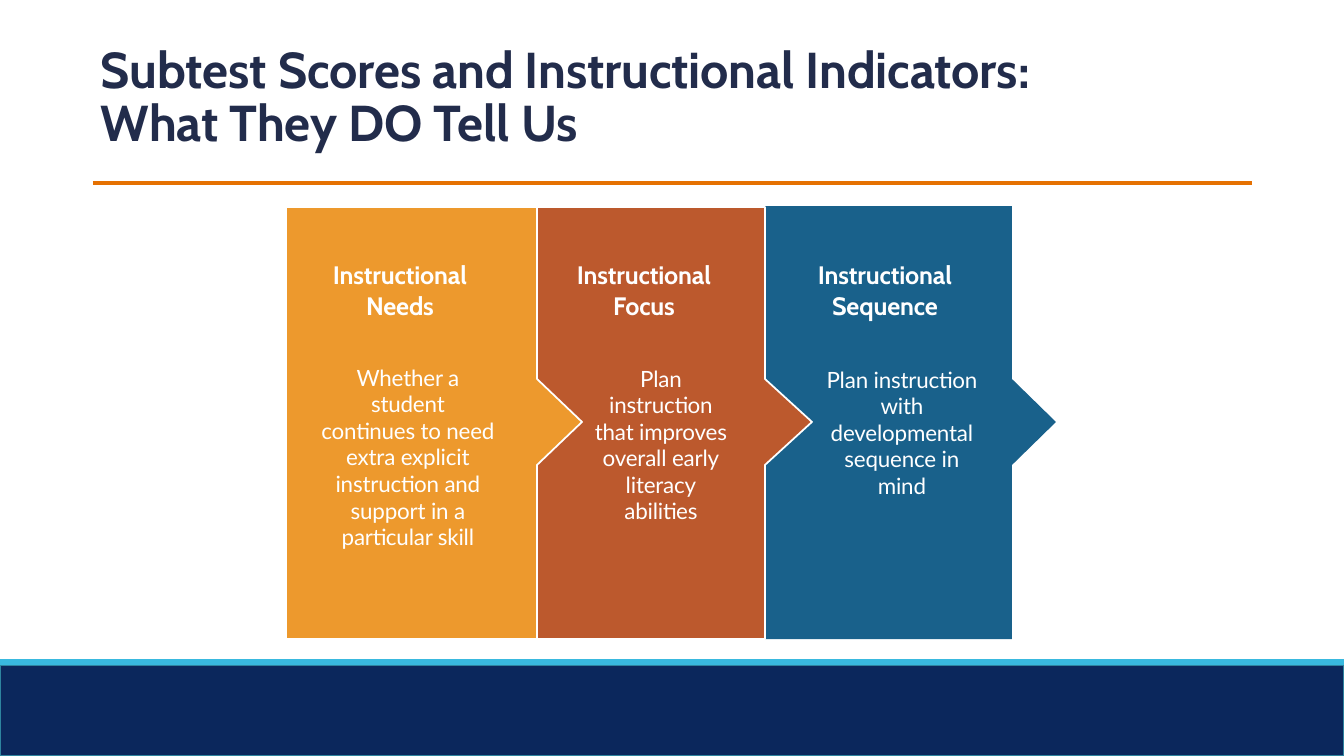
from dataclasses import dataclass

from lxml import etree
from pptx import Presentation
from pptx.dml.color import RGBColor
from pptx.enum.shapes import MSO_CONNECTOR, MSO_SHAPE
from pptx.enum.text import PP_ALIGN
from pptx.oxml.ns import qn
from pptx.util import Emu, Pt

STRAIGHT = MSO_CONNECTOR.STRAIGHT
RECTANGLE = MSO_SHAPE.RECTANGLE
LEFT, CENTER = PP_ALIGN.LEFT, PP_ALIGN.CENTER
SCALE = 914400 / 100.8


@dataclass(frozen=True)
class Theme:
    navy: str = "0B275C"
    teal: str = "2E849F"
    cyan: str = "39B9DF"
    rule: str = "E57102"
    ink: str = "222C4B"
    white: str = "FFFFFF"
    blue: str = "19618B"
    rust: str = "BC592D"
    orange: str = "ED992D"
    head_font: str = "Cabin"
    body_font: str = "Lato"
    title_size: int = 36
    head_size: int = 18
    body_size: int = 16


def px(n):
    return Emu(round(n * SCALE))


def rgb(color):
    return RGBColor.from_string(color)


class Deck:
    def __init__(self, theme):
        self.theme = theme
        self.prs = Presentation()
        self.prs.slide_width, self.prs.slide_height = px(1344), px(756)
        self.s = self.prs.slides.add_slide(self.prs.slide_layouts[6])

    def paint(self, sp, fill, line, width):
        sp.shadow.inherit = False
        sp.fill.solid()
        sp.fill.fore_color.rgb = rgb(fill)
        if line:
            sp.line.color.rgb = rgb(line)
            sp.line.width = Pt(width)
        else:
            sp.line.fill.background()

    def band(self, x, y, w, h, fill, line):
        sp = self.s.shapes.add_shape(RECTANGLE, px(x), px(y), px(w), px(h))
        self.paint(sp, fill, line, 1)

    def rule(self, x1, x2, y, color, width):
        c = self.s.shapes.add_connector(STRAIGHT, px(x1), px(y), px(x2), px(y))
        c.line.color.rgb = rgb(color)
        c.line.width = Pt(width)
        etree.SubElement(c._element.spPr, qn("a:effectLst"))

    def arrow_panel(self, left, right, tip, top, fill, line):
        bottom, middle, half = 639, 422, 43
        fb = self.s.shapes.build_freeform(left, top, scale=SCALE)
        fb.add_line_segments([
            (right, top), (right, middle - half), (tip, middle),
            (right, middle + half), (right, bottom), (left, bottom)])
        self.paint(fb.convert_to_shape(), fill, line, 1.25)

    def text(self, x, y, w, h, lines, font, size, color, bold, align, spacing):
        tf = self.s.shapes.add_textbox(px(x), px(y), px(w), px(h)).text_frame
        tf.word_wrap = True
        tf.margin_left = tf.margin_right = tf.margin_top = tf.margin_bottom = 0
        p = tf.paragraphs[0]
        p.alignment, p.line_spacing = align, spacing
        for i, line in enumerate(lines):
            if i:
                p.add_line_break()
            r = p.add_run()
            r.text = line
            r.font.name, r.font.size, r.font.bold = font, Pt(size), bold
            r.font.color.rgb = rgb(color)
            r._r.get_or_add_rPr().set("spc", "-10")


def main():
    t = Theme()
    deck = Deck(t)
    deck.band(0, 665, 1344, 91, t.navy, t.teal)
    deck.rule(0, 1344, 662, t.cyan, 4)
    deck.rule(93, 1252, 183, t.rule, 2.5)

    deck.arrow_panel(761, 1012, 1056, 206, t.blue, None)
    deck.arrow_panel(516, 765, 812, 207, t.rust, t.white)
    deck.arrow_panel(286, 537, 582, 207, t.orange, t.white)

    deck.text(101, 46, 971, 107,
              ["Subtest Scores and Instructional Indicators:", "What They DO Tell Us"],
              t.head_font, t.title_size, t.ink, True, LEFT, Pt(37.9))

    columns = [
        (400, 408, 364, "Needs",
         ["Whether a", "student", "continues to need", "extra explicit",
          "instruction and", "support in a", "particular skill"]),
        (644, 661, 365, "Focus",
         ["Plan", "instruction", "that improves", "overall early",
          "literacy", "abilities"]),
        (885, 902, 366, "Sequence",
         ["Plan instruction", "with", "developmental", "sequence in", "mind"]),
    ]
    for head_x, body_x, body_y, topic, body in columns:
        deck.text(body_x - 95, body_y, 190, 27 * len(body), body,
                  t.body_font, t.body_size, t.white, False, CENTER, Pt(19))
        deck.text(head_x - 75, 259, 150, 63, ["Instructional", topic],
                  t.head_font, t.head_size, t.white, True, CENTER, 1.02)

    deck.prs.save("out.pptx")


if __name__ == "__main__":
    main()
